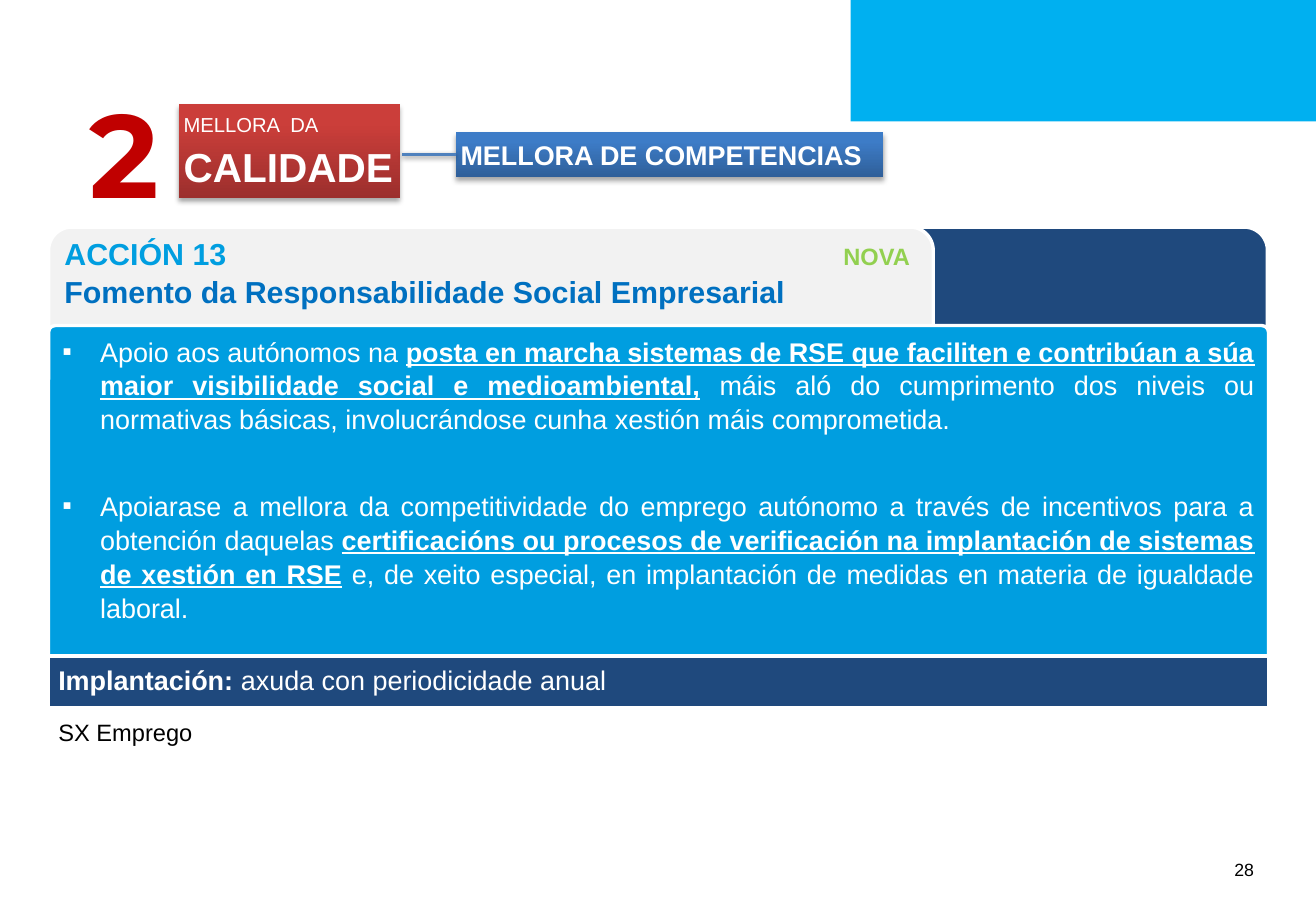
from lxml.etree import SubElement
from pptx import Presentation
from pptx.dml.color import RGBColor
from pptx.enum.shapes import MSO_CONNECTOR, MSO_SHAPE
from pptx.enum.text import MSO_ANCHOR, PP_ALIGN
from pptx.oxml.ns import qn
from pptx.util import Inches, Pt

WHITE = RGBColor(0xFF, 0xFF, 0xFF)
BLACK = RGBColor(0, 0, 0)
NAVY = RGBColor(0x1F, 0x49, 0x7D)
PALE = RGBColor(0xF2, 0xF2, 0xF2)
CYAN = RGBColor(0x00, 0x9E, 0xE0)
SKY = RGBColor(0x00, 0xB0, 0xF0)
BLUE = RGBColor(0x00, 0x70, 0xC0)
GREEN = RGBColor(0x92, 0xD0, 0x50)
RED = RGBColor(0xC0, 0, 0)
LINK_BLUE = RGBColor(0x4F, 0x81, 0xBD)
RED_FADE = (RGBColor(0x9C, 0x2F, 0x2D), RGBColor(0xCB, 0x3E, 0x3A))
BLUE_FADE = (RGBColor(0x2F, 0x5F, 0x99), RGBColor(0x3D, 0x7C, 0xC7))

# Content: a paragraph is a list of runs (text, size, colour, bold, underline)
ACTION = [
    [("ACCIÓN 13", 18, CYAN, True, False), ("\tNOVA", 14, GREEN, True, False)],
    [("Fomento da Responsabilidade Social Empresarial", 18, BLUE, True, False)],
]
MEASURES = [
    [("Apoio aos autónomos na ", 16, WHITE, False, False),
     ("posta en marcha sistemas de RSE que faciliten e contribúan a súa maior "
      "visibilidade social e medioambiental,", 16, WHITE, True, True),
     (" máis aló do cumprimento dos niveis ou normativas básicas, involucrándose "
      "cunha xestión máis comprometida.", 16, WHITE, False, False)],
    [("Apoiarase a mellora da competitividade do emprego autónomo a través de "
      "incentivos para a obtención daquelas ", 16, WHITE, False, False),
     ("certificacións ou procesos de verificación na implantación de sistemas de "
      "xestión en RSE", 16, WHITE, True, True),
     (" e, de xeito especial, en implantación de medidas en materia de igualdade "
      "laboral.", 16, WHITE, False, False)],
]
ROLLOUT = [[("Implantación:", 16, WHITE, True, False),
            (" axuda con periodicidade anual", 16, WHITE, False, False)]]
UNIT = [[("SX Emprego", 14, BLACK, False, False)]]
AREA_NUMBER = [[("2", 70, RED, True, False)]]
AREA = [[("MELLORA  DA ", 12, WHITE, False, False), ("CALIDADE", 24, WHITE, True, False)]]
TOPIC = [[("MELLORA DE COMPETENCIAS", 16, WHITE, True, False)]]
PAGE = [[("28", 10.5, BLACK, False, False)]]

WAVE_START = (5.67, 0)
WAVE_CURVES = [((5.97, 0.19), (7.68, 1.03), (8.54, 1.09)),
               ((9.4, 1.15), (10.45, 0.54), (10.83, 0.35))]
WAVE_STEPS = 24

PANEL_LEFT, PANEL_WIDTH = 0.4, 10.04
TAB_TOP, TAB_HEIGHT = 1.87, 1.14
STRIP_INSETS = (0.08, 0, 0.08, 0.04)
BADGE_INSETS = (0.04, 0.05, 0.04, 0.05)
BOX_INSETS = (0.1, 0.05, 0.1, 0.05)


def write(part, paragraphs, insets=BOX_INSETS, anchor=MSO_ANCHOR.TOP,
          font="Arial", align=PP_ALIGN.LEFT, wrap=True):
    frame = part.text_frame
    frame.word_wrap = wrap
    frame.vertical_anchor = anchor
    (frame.margin_left, frame.margin_top,
     frame.margin_right, frame.margin_bottom) = map(Inches, insets)
    for i, runs in enumerate(paragraphs):
        paragraph = frame.add_paragraph() if i else frame.paragraphs[0]
        paragraph.alignment = align
        for text, size, color, bold, underline in runs:
            run = paragraph.add_run()
            run.text = text
            run.font.name = font
            run.font.size = Pt(size)
            run.font.color.rgb = color
            run.font.bold = bold
            run.font.underline = underline
    return frame.paragraphs


def add_panel(kind, box, color):
    panel = slide.shapes.add_shape(kind, *map(Inches, box))
    panel.shadow.inherit = False
    panel.fill.solid()
    panel.fill.fore_color.rgb = color
    panel.line.color.rgb = WHITE
    panel.line.width = Pt(2)
    return panel


def add_label(box, paragraphs, **style):
    label = slide.shapes.add_textbox(*map(Inches, box))
    return write(label, paragraphs, **style)


def cast_shadow(part, distance, opacity):
    properties = part._element.spPr
    effects = properties.find(qn("a:effectLst"))
    if effects is None:
        effects = SubElement(properties, qn("a:effectLst"))
    shadow = SubElement(effects, qn("a:outerShdw"), blurRad=str(Pt(3.1)),
                        dist=str(Pt(distance)), dir="5400000", rotWithShape="0")
    color = SubElement(shadow, qn("a:srgbClr"), val="000000")
    SubElement(color, qn("a:alpha"), val=str(opacity * 1000))


def add_badge(box, fade, paragraphs):
    badge = slide.shapes.add_shape(MSO_SHAPE.RECTANGLE, *map(Inches, box))
    badge.fill.gradient()
    badge.fill.gradient_angle = 90
    for stop, color, position in zip(badge.fill.gradient_stops, fade, (0, 0.8)):
        stop.color.rgb = color
        stop.position = position
    badge.line.fill.background()
    badge.shadow.inherit = False
    cast_shadow(badge, 1.8, 35)
    return write(badge, paragraphs, BADGE_INSETS)


def wave_points():
    start = WAVE_START
    for a, b, end in WAVE_CURVES:
        for step in range(1, WAVE_STEPS + 1):
            t = step / WAVE_STEPS
            u = 1 - t
            yield tuple(u**3 * p + 3 * u * u * t * q + 3 * u * t * t * r + t**3 * s
                        for p, q, r, s in zip(start, a, b, end))
        start = end
    yield (10.83, 0)


presentation = Presentation()
presentation.slide_width = Inches(10.83)
presentation.slide_height = Inches(7.5)
slide = presentation.slides.add_slide(presentation.slide_layouts[5])

# Corner wave and page number
outline = slide.shapes.build_freeform(*WAVE_START, scale=Inches(1))
outline.add_line_segments(list(wave_points()), close=True)
wave = outline.convert_to_shape()
wave.shadow.inherit = False
wave.fill.solid()
wave.fill.fore_color.rgb = SKY
wave.line.fill.background()
add_label((10.06, 7.02, 0.47, 0.28), PAGE)

# Action heading, with the title in front of its tab
add_panel(MSO_SHAPE.ROUND_2_SAME_RECTANGLE, (3.84, TAB_TOP, 6.59, TAB_HEIGHT), NAVY)
add_panel(MSO_SHAPE.ROUND_2_SAME_RECTANGLE, (PANEL_LEFT, TAB_TOP, 7.28, TAB_HEIGHT), PALE)
title = slide.shapes.title
title.left, title.top, title.width, title.height = map(Inches, (0.45, 1.92, 7.18, 0.72))
slide.shapes._spTree.append(title._element)
for paragraph in write(title, ACTION, STRIP_INSETS):
    paragraph.line_spacing = 1.05
    tabs = SubElement(paragraph._p.get_or_add_pPr(), qn("a:tabLst"))
    SubElement(tabs, qn("a:tab"), pos=str(Inches(6.96)), algn="r")

# Measures
measures = add_panel(MSO_SHAPE.ROUNDED_RECTANGLE, (PANEL_LEFT, 2.68, PANEL_WIDTH, 2.79), CYAN)
measures.adjustments[0] = 0.02
for i, paragraph in enumerate(write(measures, MEASURES, align=PP_ALIGN.JUSTIFY)):
    paragraph.line_spacing = 1.05
    paragraph.space_after = Pt(6)
    if i:
        paragraph.space_before = Pt(25)
    properties = paragraph._p.get_or_add_pPr()
    properties.set("marL", str(Inches(0.31)))
    properties.set("indent", str(-Inches(0.31)))
    SubElement(properties, qn("a:buFont"), typeface="Arial")
    SubElement(properties, qn("a:buChar"), char="▪")

# Rollout strip and responsible unit
rollout = add_panel(MSO_SHAPE.RECTANGLE, (PANEL_LEFT, 5.4, PANEL_WIDTH, 0.43), NAVY)
strips = [write(rollout, ROLLOUT, STRIP_INSETS, MSO_ANCHOR.MIDDLE),
          add_label((PANEL_LEFT, 5.82, 1.56, 0.45), UNIT,
                    insets=STRIP_INSETS, anchor=MSO_ANCHOR.MIDDLE)]
for strip in strips:
    strip[0].space_after = Pt(6)

# Area and topic badges, joined by a line
area = add_badge((1.47, 0.86, 1.82, 0.77), RED_FADE, AREA)
area[0].line_spacing = 1.1
add_label((0.64, 0.61, 0.86, 1.28), AREA_NUMBER, font="Montserrat", wrap=False)
add_badge((3.75, 1.09, 3.52, 0.37), BLUE_FADE, TOPIC)
link = slide.shapes.add_connector(MSO_CONNECTOR.STRAIGHT, Inches(3.31), Inches(1.27),
                                  Inches(3.75), Inches(1.27))
link.line.color.rgb = LINK_BLUE
link.line.width = Pt(2)
cast_shadow(link, 1.6, 38)

presentation.save("out.pptx")
